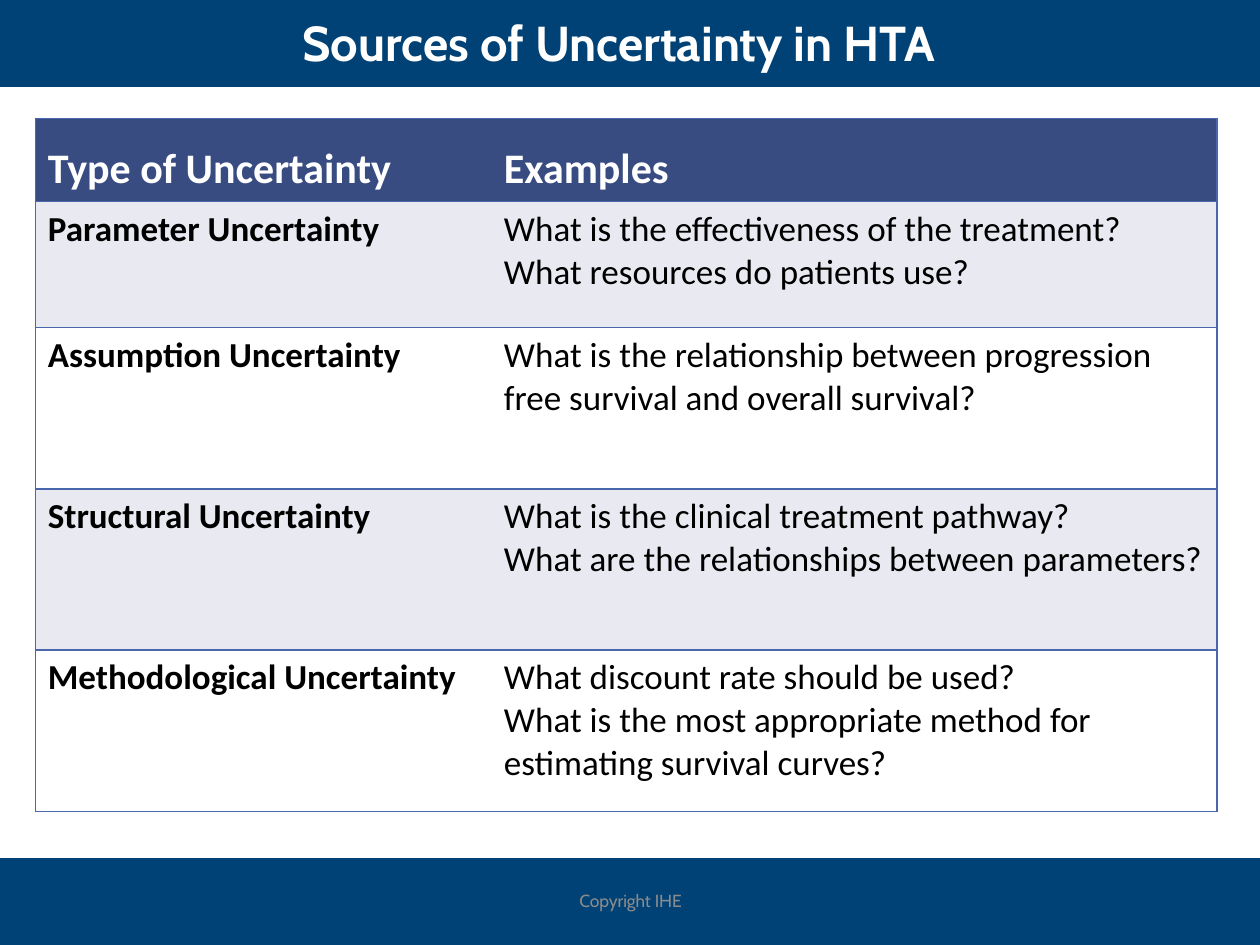
import pptx
import pptx.dml.color
import pptx.enum.shapes
import pptx.enum.text
import pptx.oxml
import pptx.oxml.ns
import pptx.util
from pptx.dml.color import RGBColor
from pptx.util import Inches

NAVY = RGBColor(0x00, 0x42, 0x75)
HEADER_BLUE = RGBColor(0x38, 0x4C, 0x81)
BORDER_BLUE = RGBColor(0x4A, 0x66, 0xAC)
BAND = RGBColor(0xE9, 0xEA, 0xF1)
WHITE = RGBColor(0xFF, 0xFF, 0xFF)
BLACK = RGBColor(0x00, 0x00, 0x00)
GRAY = RGBColor(0x8C, 0x8C, 0x8C)

HEADINGS = ("Type of Uncertainty", "Examples")
UNCERTAINTIES = (
    ("Parameter Uncertainty",
     "What is the effectiveness of the treatment?\n"
     "What resources do patients use?"),
    ("Assumption Uncertainty",
     "What is the relationship between progression free survival "
     "and overall survival?"),
    ("Structural Uncertainty",
     "What is the clinical treatment pathway?\n"
     "What are the relationships between parameters?"),
    ("Methodological Uncertainty",
     "What discount rate should be used?\n"
     "What is the most appropriate method for estimating survival curves?"),
)
COLUMN_WIDTHS = (3.62, 5.76)
ROW_HEIGHTS = (0.66, 1, 1.28, 1.28, 1.28)


class SlideBuilder:
    heading_font = "Cabin"
    body_font = "Calibri"

    def __init__(self, slide):
        self.slide = slide

    def format_runs(self, text_frame, font_name, size, color, bold):
        for paragraph in text_frame.paragraphs:
            for run in paragraph.runs:
                run.font.name = font_name
                run.font.size = pptx.util.Pt(size)
                run.font.color.rgb = color
                run.font.bold = bold

    def band(self, top):
        shape = self.slide.shapes.add_shape(
            pptx.enum.shapes.MSO_SHAPE.RECTANGLE,
            Inches(0), Inches(top), Inches(10), Inches(0.69))
        shape.shadow.inherit = False
        shape.fill.solid()
        shape.fill.fore_color.rgb = NAVY
        shape.line.fill.background()

    def label(self, text, left, top, width, size, color, bold=False, line_spacing=1.0):
        text_box = self.slide.shapes.add_textbox(
            Inches(left), Inches(top), Inches(width), Inches(0.4))
        text_frame = text_box.text_frame
        text_frame.word_wrap = True
        text_frame.vertical_anchor = pptx.enum.text.MSO_ANCHOR.MIDDLE
        text_frame.text = text
        paragraph = text_frame.paragraphs[0]
        paragraph.alignment = pptx.enum.text.PP_ALIGN.CENTER
        paragraph.line_spacing = line_spacing
        self.format_runs(text_frame, self.heading_font, size, color, bold)

    def borders(self, cell, hidden_edge):
        properties = cell._tc.get_or_add_tcPr()
        for edge in ("lnL", "lnR", "lnT", "lnB"):
            paint = "<a:noFill/>" if edge == hidden_edge else (
                f'<a:solidFill><a:srgbClr val="{BORDER_BLUE}"/></a:solidFill>')
            properties.append(pptx.oxml.parse_xml(
                f'<a:{edge} {pptx.oxml.ns.nsdecls("a")} w="12700">{paint}</a:{edge}>'))

    def table(self, rows, left, top):
        table = self.slide.shapes.add_table(
            len(rows), len(COLUMN_WIDTHS), Inches(left), Inches(top),
            Inches(sum(COLUMN_WIDTHS)), Inches(sum(ROW_HEIGHTS))).table
        for column, width in zip(table.columns, COLUMN_WIDTHS):
            column.width = Inches(width)
        for row, height in zip(table.rows, ROW_HEIGHTS):
            row.height = Inches(height)
        for row_index, texts in enumerate(rows):
            is_header = row_index == 0
            fill = HEADER_BLUE if is_header else BAND if row_index % 2 else WHITE
            for column_index, text in enumerate(texts):
                cell = table.cell(row_index, column_index)
                self.borders(cell, "lnL" if column_index else "lnR")
                cell.fill.solid()
                cell.fill.fore_color.rgb = fill
                cell.text_frame.text = text
                if is_header:
                    cell.vertical_anchor = pptx.enum.text.MSO_ANCHOR.BOTTOM
                self.format_runs(
                    cell.text_frame, self.body_font, 24 if is_header else 20,
                    WHITE if is_header else BLACK, is_header or column_index == 0)


def main():
    presentation = pptx.Presentation()
    presentation.slide_width = Inches(10)
    presentation.slide_height = Inches(7.5)
    builder = SlideBuilder(presentation.slides.add_slide(presentation.slide_layouts[6]))
    for top in (0, 6.81):
        builder.band(top)
    builder.label("Copyright IHE", 3.42, 6.95, 3.17, 10, GRAY)
    builder.label("Sources of Uncertainty in HTA", 0.16, 0.16, 9.5, 28, WHITE,
                  bold=True, line_spacing=0.9)
    builder.table((HEADINGS, *UNCERTAINTIES), 0.28, 0.94)
    presentation.save("out.pptx")


if __name__ == "__main__":
    main()
